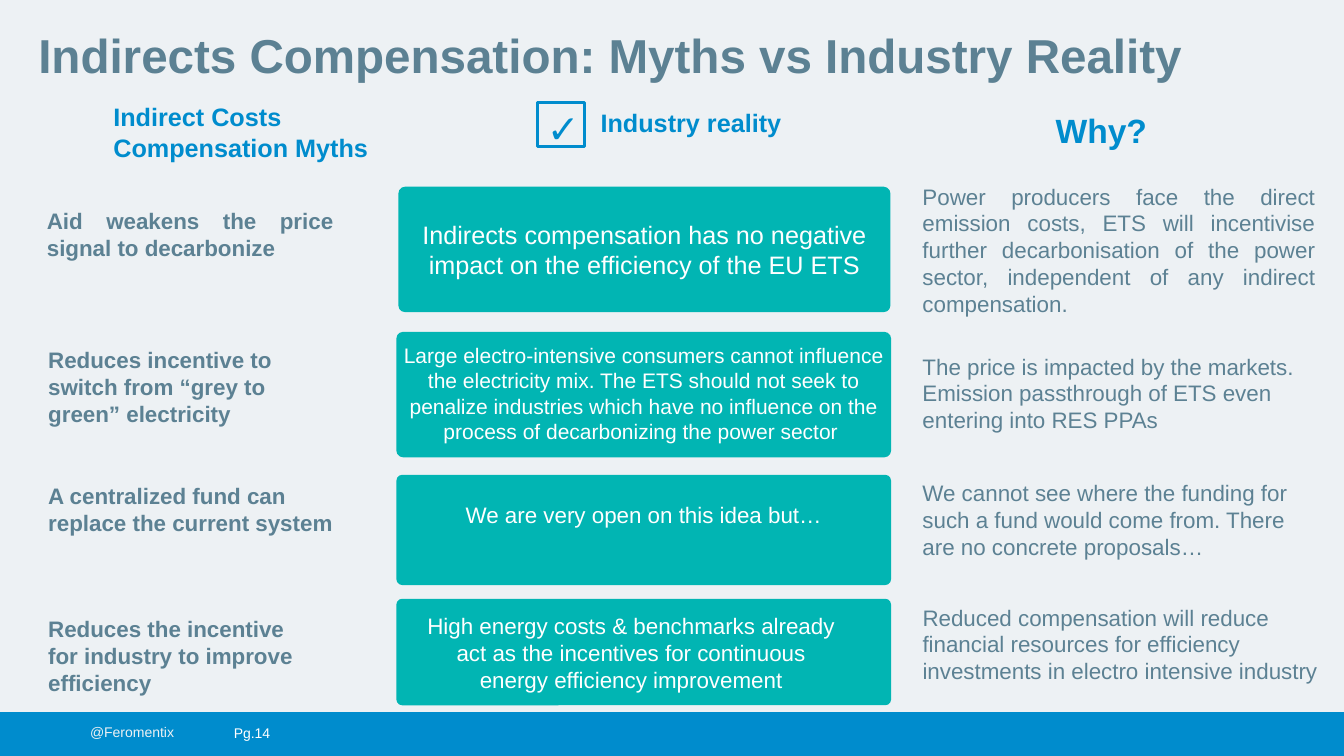
from pptx import Presentation, util as u
from pptx.dml.color import RGBColor
from pptx.enum import shapes, text

BACK, BLUE, SLATE, TEAL, WHITE = "EDF1F4", "008CCD", "5C8193", "01B5B3", "FFFFFF"
LEFT, CENTER, JUSTIFY = text.PP_ALIGN.LEFT, text.PP_ALIGN.CENTER, text.PP_ALIGN.JUSTIFY
TOP, MIDDLE = text.MSO_ANCHOR.TOP, text.MSO_ANCHOR.MIDDLE
PADDING = (0.1, 0.05, 0.1, 0.05)
NONE = (0, 0, 0, 0)


def color(value):
    return RGBColor.from_string(value)


class Board:
    """One slide; places are (left, top, width, height) in percent of its size."""

    font = "Arial"

    def __init__(self, deck):
        self.deck = deck
        self.page = deck.slides.add_slide(deck.slide_layouts[5])
        self.page.background.fill.solid()
        self.page.background.fill.fore_color.rgb = color(BACK)

    def area(self, place):
        left, top, width, height = place
        wide, high = self.deck.slide_width / 100, self.deck.slide_height / 100
        return [u.Emu(round(n)) for n in (left * wide, top * high, width * wide, height * high)]

    def set_text(self, box, words, size, ink, bold=False, align=LEFT, anchor=TOP,
                 padding=PADDING):
        """Fill a shape with one paragraph; padding is in inches, clockwise from the left."""
        frame = box.text_frame
        frame.word_wrap = True
        frame.auto_size = text.MSO_AUTO_SIZE.NONE
        frame.vertical_anchor = anchor
        (frame.margin_left, frame.margin_top,
         frame.margin_right, frame.margin_bottom) = map(u.Inches, padding)
        para = frame.paragraphs[0]
        para.text = words
        para.alignment = align
        para.font.name = self.font
        para.font.size = u.Pt(size)
        para.font.bold = bold
        para.font.color.rgb = color(ink)
        return para

    def title(self, words, place):
        box = self.page.shapes.title
        box.left, box.top, box.width, box.height = self.area(place)
        para = self.set_text(box, words, 34, SLATE, bold=True, padding=(0, 0, 0.1, 0))
        para.line_spacing = 0.9

    def label(self, words, place, size=16, ink=SLATE, **style):
        box = self.page.shapes.add_textbox(*self.area(place))
        self.set_text(box, words, size, ink, **style)

    def block(self, place, fill, line=None, weight=1, kind=shapes.MSO_SHAPE.RECTANGLE):
        box = self.page.shapes.add_shape(kind, *self.area(place))
        box.shadow.inherit = False
        box.fill.solid()
        box.fill.fore_color.rgb = color(fill)
        if line:
            box.line.color.rgb = color(line)
            box.line.width = u.Pt(weight)
        else:
            box.line.fill.background()
        return box

    def card(self, words, place, size, anchor, padding):
        box = self.block(place, TEAL, TEAL, kind=shapes.MSO_SHAPE.ROUNDED_RECTANGLE)
        box.adjustments[0] = 0.048
        self.set_text(box, words, size, WHITE, align=CENTER, anchor=anchor, padding=padding)


MYTHS = [
    ("Aid weakens the price signal to decarbonize ", (2.75, 26.7, 22.8, 8.5), JUSTIFY),
    ("Reduces incentive to switch from “grey to green” electricity", (2.85, 45.1, 21.5, 12.1), LEFT),
    ("A centralized fund can replace the current system", (2.85, 63.1, 25.3, 8.5), LEFT),
    ("Reduces the incentive for industry to improve efficiency", (2.85, 80.7, 21.5, 12.1), LEFT),
]
REALITY = [
    ("Indirects compensation has no negative impact on the efficiency of the EU ETS",
     (29.7, 24.8, 36.5, 16.4), 18, MIDDLE, PADDING),
    ("Large electro-intensive consumers cannot influence the electricity mix. The ETS should "
     "not seek to penalize industries which have no influence on the process of decarbonizing "
     "the power sector ", (29.55, 44, 36.7, 16.4), 15, MIDDLE, (0, 0, 0, 0.03)),
    ("We are very open on this idea but…",
     (29.55, 62.9, 36.7, 14.4), 16, TOP, (0.1, 0.24, 0.1, 0)),
    ("High energy costs & benchmarks already act as the incentives for continuous energy "
     "efficiency improvement", (29.55, 79.3, 36.7, 13.9), 16, MIDDLE, (0.21, 0.05, 0.46, 0.04)),
]
REASONS = [
    ("Power producers face the direct emission costs, ETS will incentivise further "
     "decarbonisation of the power sector, independent of any indirect compensation. ",
     (67.9, 23.5, 30.7, 19.3), JUSTIFY),
    ("The price is impacted by the markets. Emission passthrough of ETS even entering into "
     "RES PPAs", (67.9, 46, 30.7, 12.1), LEFT),
    ("We cannot see where the funding for such a fund would come from. There are no concrete "
     "proposals…", (67.9, 62.7, 29.3, 12.1), LEFT),
    ("Reduced compensation will reduce financial resources for efficiency investments in "
     "electro intensive industry", (67.9, 79.2, 31.7, 12.1), LEFT),
]
HEADINGS = [
    ("Indirect Costs Compensation Myths", (7.7, 12.8, 21.75, 13.5), 18),
    ("Industry reality", (43.95, 13.6, 21.8, 5.3), 18),
    ("Why?", (77.8, 13.9, 21.8, 6.7), 24),
]


def main():
    deck = Presentation()
    deck.slide_width, deck.slide_height = u.Inches(13.33), u.Inches(7.5)
    board = Board(deck)

    board.block((0, 94.2, 100, 5.8), BLUE)
    board.label("@Feromentix", (6.7, 95.7, 9.2, 2.3), 10, BACK, padding=NONE)
    board.label("Pg.14", (17.4, 95, 4.1, 4), 10, WHITE, anchor=MIDDLE, padding=NONE)

    board.title("Indirects Compensation: Myths vs Industry Reality", (2.85, 4.3, 91.5, 10.7))
    for words, place, size in HEADINGS:
        board.label(words, place, size, BLUE, bold=True)
    checkbox = board.block((40, 13.6, 3.5, 5.8), BACK, BLUE, 2.25)
    board.set_text(checkbox, "✓", 28, BLUE, bold=True, align=CENTER, anchor=MIDDLE,
                   padding=(0.04, 0.06, 0, 0))

    for words, place, align in MYTHS:
        board.label(words, place, bold=True, align=align)
    for entry in REALITY:
        board.card(*entry)
    for words, place, align in REASONS:
        board.label(words, place, align=align)

    deck.save("out.pptx")


if __name__ == "__main__":
    main()
